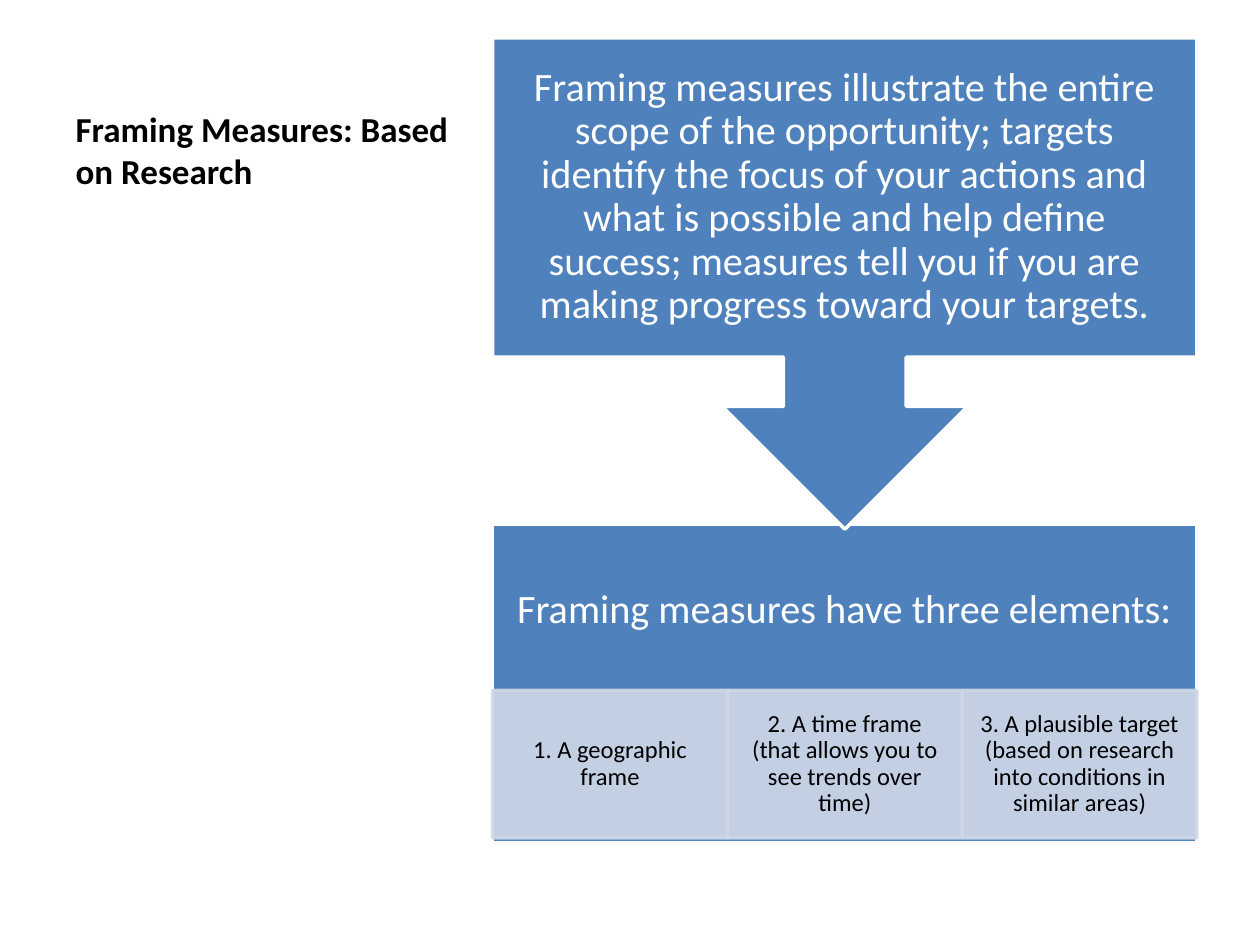
from dataclasses import dataclass

from lxml import etree
from pptx import Presentation
from pptx.dml.color import RGBColor
from pptx.enum.shapes import MSO_SHAPE
from pptx.enum.text import MSO_ANCHOR, MSO_AUTO_SIZE, PP_ALIGN
from pptx.oxml.ns import qn
from pptx.shapes.autoshape import Shape
from pptx.slide import Slide
from pptx.util import Inches, Pt

RECTANGLE = MSO_SHAPE.RECTANGLE
ARROW_CALLOUT = MSO_SHAPE.UP_ARROW_CALLOUT
MIDDLE, BOTTOM = MSO_ANCHOR.MIDDLE, MSO_ANCHOR.BOTTOM
LEFT, CENTER = PP_ALIGN.LEFT, PP_ALIGN.CENTER
NO_AUTOFIT = MSO_AUTO_SIZE.NONE
TITLE_ONLY_LAYOUT = 5


@dataclass(frozen=True)
class Theme:
    font: str = "Calibri"
    blue: RGBColor = RGBColor(0x4F, 0x81, 0xBD)
    pale: RGBColor = RGBColor(0xD0, 0xD8, 0xE8)
    white: RGBColor = RGBColor(0xFF, 0xFF, 0xFF)
    black: RGBColor = RGBColor(0, 0, 0)
    title_size: int = 20
    block_size: int = 23
    element_size: int = 14
    line_width: int = 2
    pale_opacity: int = 90


@dataclass(frozen=True)
class Box:
    left: float
    top: float
    width: float
    height: float

    def lengths(self) -> tuple[Inches, Inches, Inches, Inches]:
        return Inches(self.left), Inches(self.top), Inches(self.width), Inches(self.height)


@dataclass(frozen=True)
class Block:
    preset: MSO_SHAPE
    outline: Box
    text_area: Box
    text: str
    rotation: int = 0


THEME = Theme()
TITLE = "Framing Measures: Based on Research"
TITLE_BOX = Box(0.5, 0.3, 3.29, 1.27)
DIAGRAM_LEFT, DIAGRAM_WIDTH = 3.91, 5.59
ELEMENTS_TOP, ELEMENTS_HEIGHT = 5.48, 1.17
BLOCKS = (
    Block(
        RECTANGLE,
        Box(DIAGRAM_LEFT, 4.16, DIAGRAM_WIDTH, 2.53),
        Box(DIAGRAM_LEFT, 4.16, DIAGRAM_WIDTH, 1.37),
        "Framing measures have three elements:",
    ),
    Block(
        ARROW_CALLOUT,
        Box(DIAGRAM_LEFT, 0.3, DIAGRAM_WIDTH, 3.9),
        Box(DIAGRAM_LEFT, 0.3, DIAGRAM_WIDTH, 2.53),
        "Framing measures illustrate the entire scope of the opportunity; targets identify "
        "the focus of your actions and what is possible and help define success; measures "
        "tell you if you are making progress toward your targets.",
        rotation=180,
    ),
)
ELEMENTS = (
    "1. A geographic frame",
    "2. A time frame (that allows you to see trends over time)",
    "3. A plausible target (based on research into conditions in similar areas)",
)


def add_panel(slide: Slide, preset: MSO_SHAPE, box: Box, fill: RGBColor, line: RGBColor) -> Shape:
    shape = slide.shapes.add_shape(preset, *box.lengths())
    shape.shadow.inherit = False
    shape.fill.solid()
    shape.fill.fore_color.rgb = fill
    shape.line.color.rgb = line
    shape.line.width = Pt(THEME.line_width)
    return shape


def set_opacity(shape: Shape, percent: int) -> None:
    for color in shape._element.spPr.iter(qn("a:srgbClr")):
        etree.SubElement(color, qn("a:alpha")).set("val", str(percent * 1000))


def write_centered(
    shape: Shape, text: str, size: int, color: RGBColor, side_inset: float, end_inset: float
) -> None:
    frame = shape.text_frame
    frame.word_wrap = True
    frame.vertical_anchor = MIDDLE
    frame.margin_left = frame.margin_right = Inches(side_inset)
    frame.margin_top = frame.margin_bottom = Inches(end_inset)
    paragraph = frame.paragraphs[0]
    paragraph.text = text
    paragraph.alignment = CENTER
    paragraph.line_spacing = 0.9
    paragraph.font.name = THEME.font
    paragraph.font.size = Pt(size)
    paragraph.font.color.rgb = color


def add_title(slide: Slide) -> None:
    title = slide.shapes.title
    title.left, title.top, title.width, title.height = TITLE_BOX.lengths()
    frame = title.text_frame
    frame.auto_size = NO_AUTOFIT
    frame.vertical_anchor = BOTTOM
    paragraph = frame.paragraphs[0]
    paragraph.text = TITLE
    paragraph.alignment = LEFT
    paragraph.font.name = THEME.font
    paragraph.font.size = Pt(THEME.title_size)
    paragraph.font.bold = True
    paragraph.font.color.rgb = THEME.black


def add_block(slide: Slide, block: Block) -> None:
    panel = add_panel(slide, block.preset, block.outline, THEME.blue, THEME.white)
    panel.rotation = block.rotation
    label = slide.shapes.add_textbox(*block.text_area.lengths())
    write_centered(label, block.text, THEME.block_size, THEME.white, 0.18, 0.18)


def add_elements(slide: Slide) -> None:
    width = DIAGRAM_WIDTH / len(ELEMENTS)
    for index, text in enumerate(ELEMENTS):
        box = Box(DIAGRAM_LEFT + index * width, ELEMENTS_TOP, width, ELEMENTS_HEIGHT)
        cell = add_panel(slide, RECTANGLE, box, THEME.pale, THEME.pale)
        set_opacity(cell, THEME.pale_opacity)
        write_centered(cell, text, THEME.element_size, THEME.black, 0.11, 0.02)


def main() -> None:
    presentation = Presentation()
    presentation.slide_width = Inches(10)
    presentation.slide_height = Inches(7.5)
    slide = presentation.slides.add_slide(presentation.slide_layouts[TITLE_ONLY_LAYOUT])
    add_title(slide)
    elements_block, measures_block = BLOCKS
    add_block(slide, elements_block)
    add_elements(slide)
    add_block(slide, measures_block)
    presentation.save("out.pptx")


if __name__ == "__main__":
    main()
